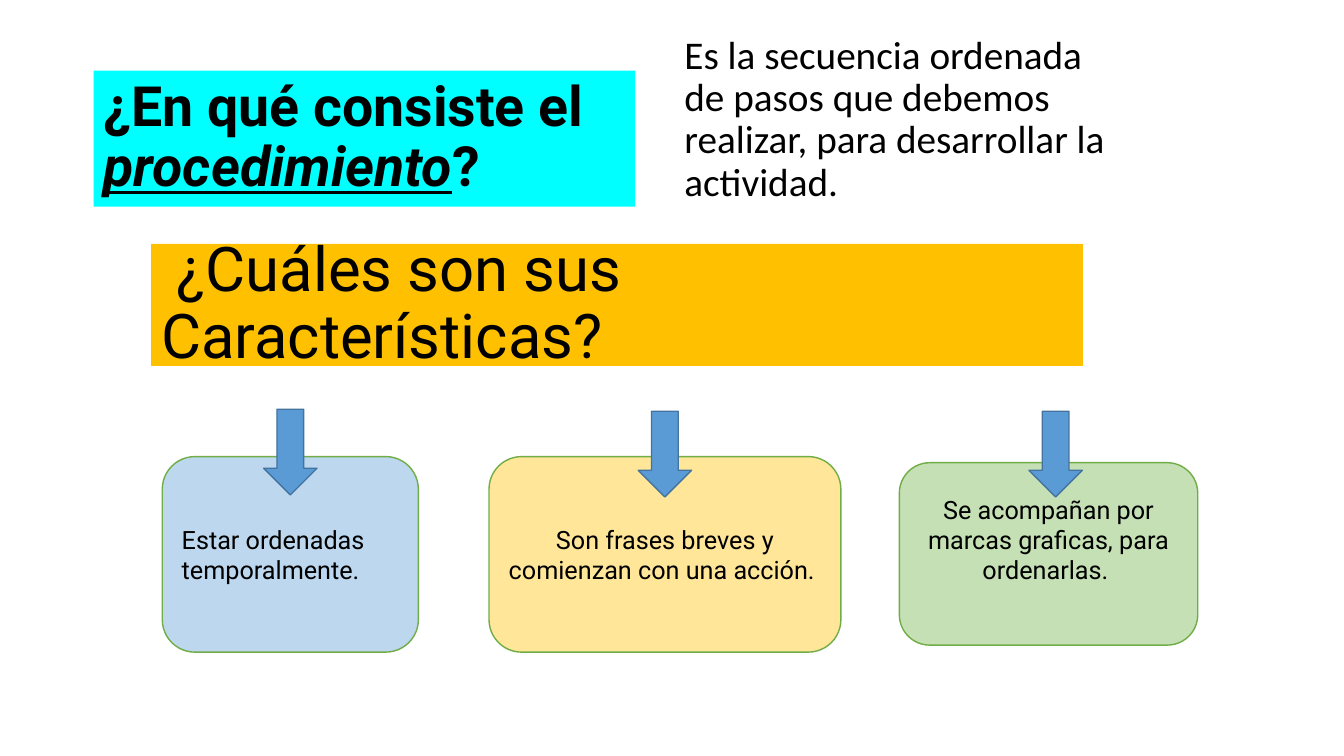
import pptx
import pptx.util
from pptx.dml.color import RGBColor
from pptx.enum.shapes import MSO_SHAPE
from pptx.enum.text import MSO_ANCHOR, PP_ALIGN
from pptx.util import Inches

BLACK = RGBColor(0x00, 0x00, 0x00)
CYAN = RGBColor(0x00, 0xFF, 0xFF)
AMBER = RGBColor(0xFF, 0xC0, 0x00)
PALE_BLUE = RGBColor(0xBD, 0xD7, 0xEE)
PALE_YELLOW = RGBColor(0xFF, 0xE6, 0x99)
PALE_GREEN = RGBColor(0xC5, 0xE0, 0xB4)
GREEN = RGBColor(0x70, 0xAD, 0x47)
BLUE = RGBColor(0x5B, 0x9B, 0xD5)
DARK_BLUE = RGBColor(0x43, 0x73, 0x9E)

ARROW_WIDTH, ARROW_HEIGHT = 0.53, 0.85
LINE_18PT = 0.29

# box, fill, text, alignment, arrow shift from the centre, arrow top, extra bottom margin
CHARACTERISTICS = [
    ((1.61, 4.53, 2.54, 1.94), PALE_BLUE, "Estar ordenadas temporalmente.",
     PP_ALIGN.LEFT, 0, 4.06, 0),
    ((4.85, 4.53, 3.49, 1.94), PALE_YELLOW,
     "Son frases breves y comienzan con una acción. ", PP_ALIGN.CENTER, 0, 4.08, 0),
    ((8.92, 4.59, 2.96, 1.81), PALE_GREEN,
     "Se acompañan por marcas graficas, para ordenarlas. ",
     PP_ALIGN.CENTER, 0.07, 4.08, LINE_18PT),
]


def add_filled_shape(slide, preset, box, fill, outline=None):
    shape = slide.shapes.add_shape(preset, *map(Inches, box))
    shape.shadow.inherit = False
    shape.fill.solid()
    shape.fill.fore_color.rgb = fill
    if outline is None:
        shape.line.fill.background()
    else:
        shape.line.color.rgb = outline
        shape.line.width = pptx.util.Pt(1)
    return shape


def write(shape, pieces, size, font="Roboto", anchor=MSO_ANCHOR.MIDDLE,
          alignment=PP_ALIGN.LEFT, spacing=0.9):
    """Fill the shape with one paragraph and return it."""
    frame = shape.text_frame
    frame.word_wrap = True
    frame.vertical_anchor = anchor
    paragraph = frame.paragraphs[0]
    for piece in pieces:
        paragraph.add_run().text = piece
    paragraph.alignment = alignment
    paragraph.line_spacing = spacing
    paragraph.font.name = font
    paragraph.font.size = pptx.util.Pt(size)
    paragraph.font.color.rgb = BLACK
    return paragraph


def add_question(slide, box):
    banner = add_filled_shape(slide, MSO_SHAPE.RECTANGLE, box, CYAN)
    question = write(banner, ["¿En qué consiste el ", "procedimiento", "?"], 39.6)
    question.font.bold = True
    key_word = question.runs[1].font
    key_word.italic = True
    key_word.underline = True


def add_definition(slide, box):
    definition = slide.shapes.add_textbox(*map(Inches, box))
    write(definition, ["Es la secuencia ordenada de pasos que debemos realizar, "
                       "para desarrollar la actividad."],
          28, font="Calibri", anchor=MSO_ANCHOR.TOP)


def add_characteristics_heading(slide, box):
    banner = add_filled_shape(slide, MSO_SHAPE.RECTANGLE, box, AMBER)
    write(banner, [" ¿Cuáles son sus Características?"], 44)


def add_characteristic(slide, box, fill, text, alignment, arrow_shift, arrow_top,
                       extra_bottom):
    """Add a rounded card with an arrow pointing down into it."""
    left, _, width, _ = box
    card = add_filled_shape(slide, MSO_SHAPE.ROUNDED_RECTANGLE, box, fill, GREEN)
    write(card, [text], 18, alignment=alignment, spacing=1.0)
    card.text_frame.margin_bottom = Inches(0.05 + extra_bottom)
    arrow_left = left + (width - ARROW_WIDTH) / 2 + arrow_shift
    add_filled_shape(slide, MSO_SHAPE.DOWN_ARROW,
                     (arrow_left, arrow_top, ARROW_WIDTH, ARROW_HEIGHT),
                     BLUE, DARK_BLUE)


def main():
    presentation = pptx.Presentation()
    presentation.slide_width = Inches(13.33)
    presentation.slide_height = Inches(7.5)
    slide = presentation.slides.add_slide(presentation.slide_layouts[6])
    add_question(slide, (0.93, 0.7, 5.37, 1.35))
    add_definition(slide, (6.69, 0.3, 4.53, 1.93))
    add_characteristics_heading(slide, (1.5, 2.42, 9.24, 1.21))
    for characteristic in CHARACTERISTICS:
        add_characteristic(slide, *characteristic)
    presentation.save("out.pptx")


if __name__ == "__main__":
    main()
